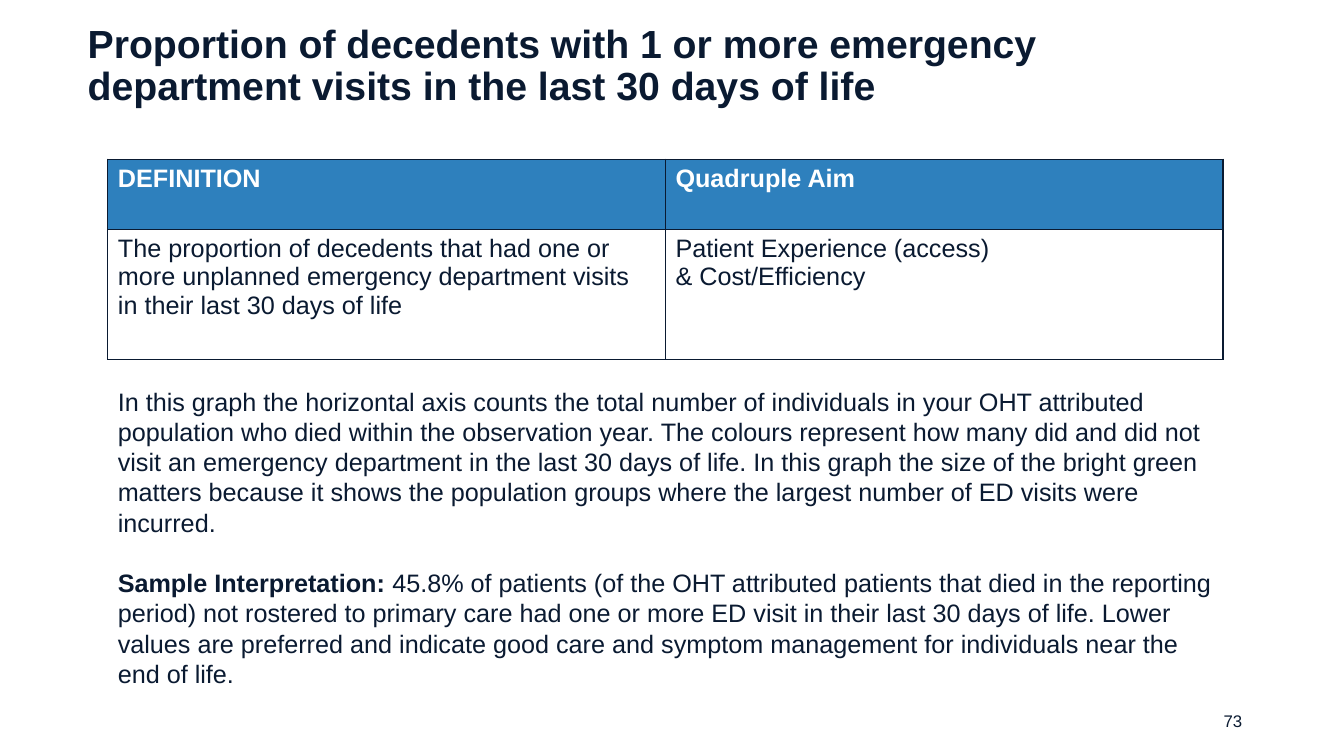
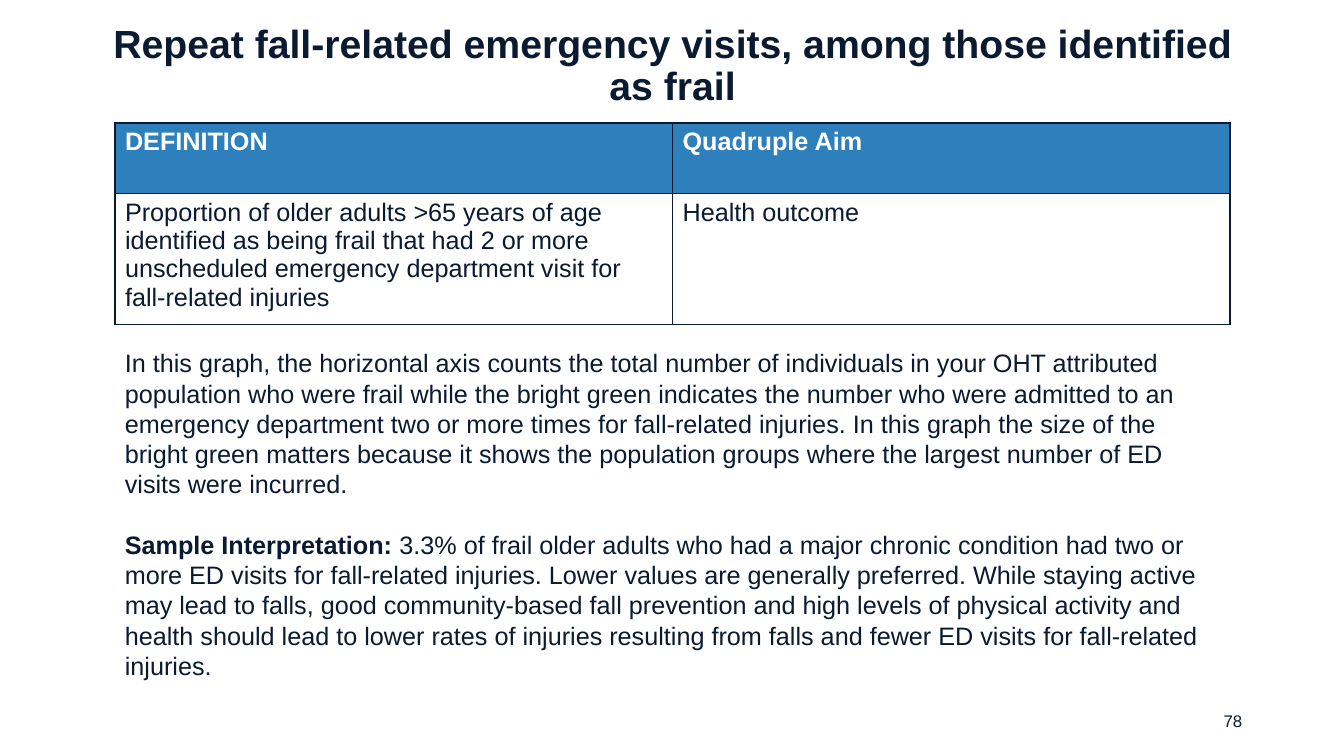
from lxml.etree import SubElement
from pptx import Presentation
from pptx.dml.color import RGBColor
from pptx.enum.text import MSO_ANCHOR as Anchor, MSO_AUTO_SIZE as AutoSize, PP_ALIGN as Align
from pptx.oxml.ns import qn
from pptx.util import Inches, Pt

COLORS = {"ink": "0A1A31", "header": "2E80BD", "white": "FFFFFF"}
FONT = "Arial"
CONTENT_WIDTH = 11.06
ROW_HEIGHTS = (0.7, 1.29)
HEADINGS = ("DEFINITION", "Quadruple Aim")
LEAD = "Sample Interpretation: "

SLIDES = [
    {
        "title": "Proportion of decedents with 1 or more emergency department visits "
                 "in the last 30 days of life",
        "align": Align.LEFT,
        "number": "73",
        "table_at": (1.07, 1.58),
        "definition": "The proportion of decedents that had one or more unplanned emergency "
                      "department visits in their last 30 days of life",
        "aim": "Patient Experience (access)\n& Cost/Efficiency",
        "notes_at": (1.07, 3.78, CONTENT_WIDTH, 3.13),
        "reading": "In this graph the horizontal axis counts the total number of individuals in "
                   "your OHT attributed population who died within the observation year. The "
                   "colours represent how many did and did not visit an emergency department in "
                   "the last 30 days of life. In this graph the size of the bright green matters "
                   "because it shows the population groups where the largest number of ED visits "
                   "were incurred.",
        "sample": "45.8% of patients (of the OHT attributed patients that died in the reporting "
                  "period) not rostered to primary care had one or more ED visit in their last "
                  "30 days of life. Lower values are preferred and indicate good care and symptom "
                  "management for individuals near the end of life.",
    },
    {
        "title": "Repeat fall-related emergency visits, among those identified as frail",
        "align": Align.CENTER,
        "number": "78",
        "table_at": (1.14, 1.22),
        "definition": "Proportion of older adults >65 years of age identified as being frail that "
                      "had 2 or more unscheduled emergency department visit for fall-related "
                      "injuries",
        "aim": "Health outcome",
        "notes_at": (1.14, 3.4, CONTENT_WIDTH, 3.43),
        "reading": "In this graph, the horizontal axis counts the total number of individuals in "
                   "your OHT attributed population who were frail while the bright green "
                   "indicates the number who were admitted to an emergency department two or more "
                   "times for fall-related injuries. In this graph the size of the bright green "
                   "matters because it shows the population groups where the largest number of "
                   "ED visits were incurred.",
        "sample": "3.3% of frail older adults who had a major chronic condition had two or more "
                  "ED visits for fall-related injuries. Lower values are generally preferred. "
                  "While staying active may lead to falls, good community-based fall prevention "
                  "and high levels of physical activity and health should lead to lower rates of "
                  "injuries resulting from falls and fewer ED visits for fall-related injuries.",
    },
]


def set_all(target, values):
    """Set each attribute of the target from a dict of format values."""
    for name, value in values.items():
        setattr(target, name, value)


def style_font(font, size, color="ink", bold=False):
    """Give a font the shared typeface, a size, a colour and a weight."""
    set_all(font, {"name": FONT, "size": Pt(size), "bold": bold})
    font.color.rgb = RGBColor.from_string(COLORS[color])


def add_run(paragraph, text, size, bold=False):
    """Add a styled run to a paragraph."""
    run = paragraph.add_run()
    run.text = text
    style_font(run.font, size, bold=bold)


def add_text_box(slide, at, **frame_format):
    """Add a wrapping text box and return its text frame."""
    frame = slide.shapes.add_textbox(*map(Inches, at)).text_frame
    set_all(frame, {"word_wrap": True, **frame_format})
    return frame


def add_title(slide, text, align):
    """Place and format the title placeholder."""
    title = slide.shapes.title
    place = zip(("left", "top", "width", "height"), map(Inches, (0.77, 0.24, 11.8, 0.84)))
    set_all(title, dict(place))
    frame = title.text_frame
    set_all(frame, {"word_wrap": True, "vertical_anchor": Anchor.MIDDLE,
                    "auto_size": AutoSize.NONE})
    paragraph = frame.paragraphs[0]
    set_all(paragraph, {"alignment": align, "line_spacing": 0.9})
    add_run(paragraph, text, 28, bold=True)


def add_page_number(slide, number):
    """Write the page number at the lower right."""
    frame = add_text_box(slide, (9.42, 6.95, 3, 0.4), vertical_anchor=Anchor.MIDDLE)
    frame.paragraphs[0].alignment = Align.RIGHT
    add_run(frame.paragraphs[0], number, 12)


def add_borders(cell):
    """Draw a one-point line on every side of a cell."""
    properties = cell._tc.get_or_add_tcPr()
    for side in ("lnL", "lnR", "lnT", "lnB"):
        line = SubElement(properties, qn(f"a:{side}"), w=str(Pt(1)))
        SubElement(SubElement(line, qn("a:solidFill")), qn("a:srgbClr"), val=COLORS["ink"])


def fill_cell(cell, text, fill, color, bold):
    """Write and format one table cell."""
    add_borders(cell)
    cell.fill.solid()
    cell.fill.fore_color.rgb = RGBColor.from_string(COLORS[fill])
    cell.text = text
    for paragraph in cell.text_frame.paragraphs:
        style_font(paragraph.runs[0].font, 18, color, bold)


def add_definition_table(slide, at, definition, aim):
    """Add the table of definition and aim."""
    size = (CONTENT_WIDTH, sum(ROW_HEIGHTS))
    table = slide.shapes.add_table(2, 2, *map(Inches, at + size)).table
    rows = [(HEADINGS, "header", "white", True), ((definition, aim), "white", "ink", False)]
    for row, height, (texts, *look) in zip(table.rows, ROW_HEIGHTS, rows):
        row.height = Inches(height)
        for cell, text in zip(row.cells, texts):
            fill_cell(cell, text, *look)


def add_explanation(slide, at, reading, sample):
    """Explain the graph and give a sample interpretation."""
    frame = add_text_box(slide, at, auto_size=AutoSize.SHAPE_TO_FIT_TEXT)
    add_run(frame.paragraphs[0], reading, 18)
    interpretation = frame.add_paragraph()
    interpretation.space_before = Pt(21.6)
    add_run(interpretation, LEAD, 18, bold=True)
    add_run(interpretation, sample, 18)


def main():
    """Build and save the presentation."""
    deck = Presentation()
    set_all(deck, {"slide_width": Inches(13.33), "slide_height": Inches(7.5)})
    for content in SLIDES:
        slide = deck.slides.add_slide(deck.slide_layouts[5])
        add_page_number(slide, content["number"])
        add_title(slide, content["title"], content["align"])
        add_definition_table(slide, content["table_at"], content["definition"], content["aim"])
        add_explanation(slide, content["notes_at"], content["reading"], content["sample"])
    deck.save("out.pptx")


if __name__ == "__main__":
    main()
